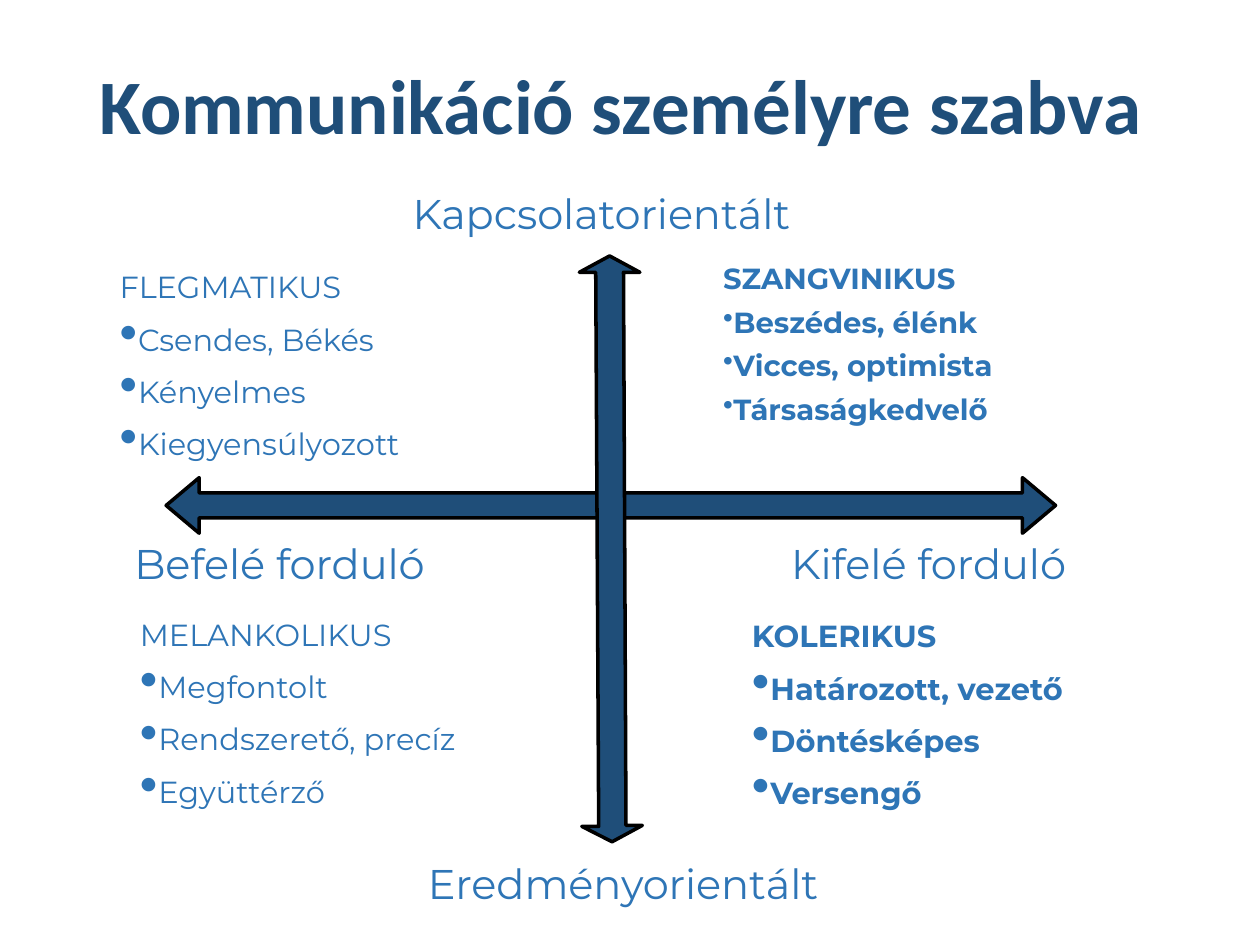
from lxml import etree
from pptx import Presentation
from pptx.dml.color import RGBColor
from pptx.enum.shapes import MSO_SHAPE
from pptx.enum.text import MSO_ANCHOR, PP_ALIGN
from pptx.oxml.ns import qn
from pptx.util import Cm, Pt

TOP, MIDDLE = MSO_ANCHOR.TOP, MSO_ANCHOR.MIDDLE
LEFT, CENTER = PP_ALIGN.LEFT, PP_ALIGN.CENTER
ARROW = MSO_SHAPE.LEFT_RIGHT_ARROW

THEME = {
    "dark": RGBColor(0x1F, 0x4E, 0x79),
    "blue": RGBColor(0x2E, 0x75, 0xB6),
    "outline": RGBColor(0, 0, 0),
    "title": {"name": "Calibri", "size": Pt(44), "bold": True},
    "axis": {"name": "Montserrat", "size": Pt(23.7), "bold": False},
    "calm": {"name": "Montserrat", "size": Pt(17.4), "bold": False},
    "lively": {"name": "Montserrat", "size": Pt(17.4), "bold": True},
    "compact": {"name": "Montserrat", "size": Pt(16.6), "bold": True},
}
NO_INSET = dict.fromkeys(
    ("margin_left", "margin_top", "margin_right", "margin_bottom"), 0)
CENTERED = {"vertical_anchor": MIDDLE, **NO_INSET}

prs = Presentation()
prs.slide_width, prs.slide_height = Cm(25.4), Cm(19.05)
s = prs.slides.add_slide(prs.slide_layouts[6])


def add_text(box, lines, style, color, frame, para, bullet=None, indent=0):
    """Add a text box; every line after the first gets the bullet XML, if any."""
    tf = s.shapes.add_textbox(*map(Cm, box)).text_frame
    for key, value in {"word_wrap": True, **frame}.items():
        setattr(tf, key, value)
    for i, line in enumerate(lines):
        p = tf.paragraphs[0] if i == 0 else tf.add_paragraph()
        for key, value in para.items():
            setattr(p, key, value)
        pPr = p._p.get_or_add_pPr()
        pPr.set("marL", str(Cm(indent)))
        pPr.set("indent", "0")
        if i and bullet:
            etree.SubElement(pPr, qn("a:buSzPct"), val=str(bullet * 1000))
            etree.SubElement(pPr, qn("a:buChar"), char="•")
        r = p.add_run()
        r.text = line
        for key, value in THEME[style].items():
            setattr(r.font, key, value)
        r.font.color.rgb = color


def paint_arrow(sp):
    sp.shadow.inherit = False
    sp.fill.solid()
    sp.fill.fore_color.rgb = THEME["dark"]
    sp.line.color.rgb = THEME["outline"]
    sp.line.width = Pt(2)


add_text((1.75, -0.28, 21.89, 4.98), ["Kommunikáció személyre szabva"], "title",
         THEME["dark"], {"vertical_anchor": MIDDLE},
         {"alignment": LEFT, "line_spacing": 0.9})

# Axes: the vertical one leans slightly
horizontal = s.shapes.add_shape(ARROW, Cm(3.35), Cm(9.63), Cm(17.93), Cm(1.12))
horizontal.adjustments[0], horizontal.adjustments[1] = 0.447, 0.595
paint_arrow(horizontal)

outline = [(Cm(x), Cm(y)) for x, y in (
    (12.07, 16.66), (11.73, 16.66), (12.34, 16.97), (12.95, 16.64), (12.62, 16.64),
    (12.57, 5.49), (12.9, 5.49), (12.29, 5.16), (11.68, 5.49), (12.01, 5.49))]
builder = s.shapes.build_freeform(*outline[0])
builder.add_line_segments(outline[1:], close=True)
paint_arrow(builder.convert_to_shape())

axis_labels = [
    ("Befelé forduló", (2.03, 10.29, 7.21, 2.13)),
    ("Kifelé forduló", (12.7, 10.29, 12.04, 2.13)),
    ("Eredményorientált", (3.63, 16.81, 17.86, 1.96)),
    ("Kapcsolatorientált", (5.84, 1.07, 12.57, 6.45)),
]
for label, box in axis_labels:
    add_text(box, [label], "axis", THEME["blue"], CENTERED, {"alignment": CENTER})

# Temperaments
add_text((13.87, 5.26, 9.12, 3.73),
         ["SZANGVINIKUS", "Beszédes, élénk", "Vicces, optimista", "Társaságkedvelő"],
         "compact", THEME["blue"], {"vertical_anchor": TOP},
         {"alignment": LEFT, "space_before": Pt(9), "line_spacing": 0.8},
         bullet=100, indent=0.46)

temperaments = [
    ("lively", (15.16, 12.45, 9.96, 3.89),
     ["KOLERIKUS", "Határozott, vezető", "Döntésképes", "Versengő"]),
    ("calm", (2.82, 12.09, 11.63, 4.55),
     ["MELANKOLIKUS", "Megfontolt", "Rendszerető, precíz", "Együttérző"]),
    ("calm", (2.41, 3.78, 7.04, 7.16),
     ["FLEGMATIKUS", "Csendes, Békés", "Kényelmes", "Kiegyensúlyozott"]),
]
for style, box, lines in temperaments:
    add_text(box, lines, style, THEME["blue"], CENTERED,
             {"alignment": LEFT, "space_before": Pt(9)}, bullet=171)

prs.save("out.pptx")
